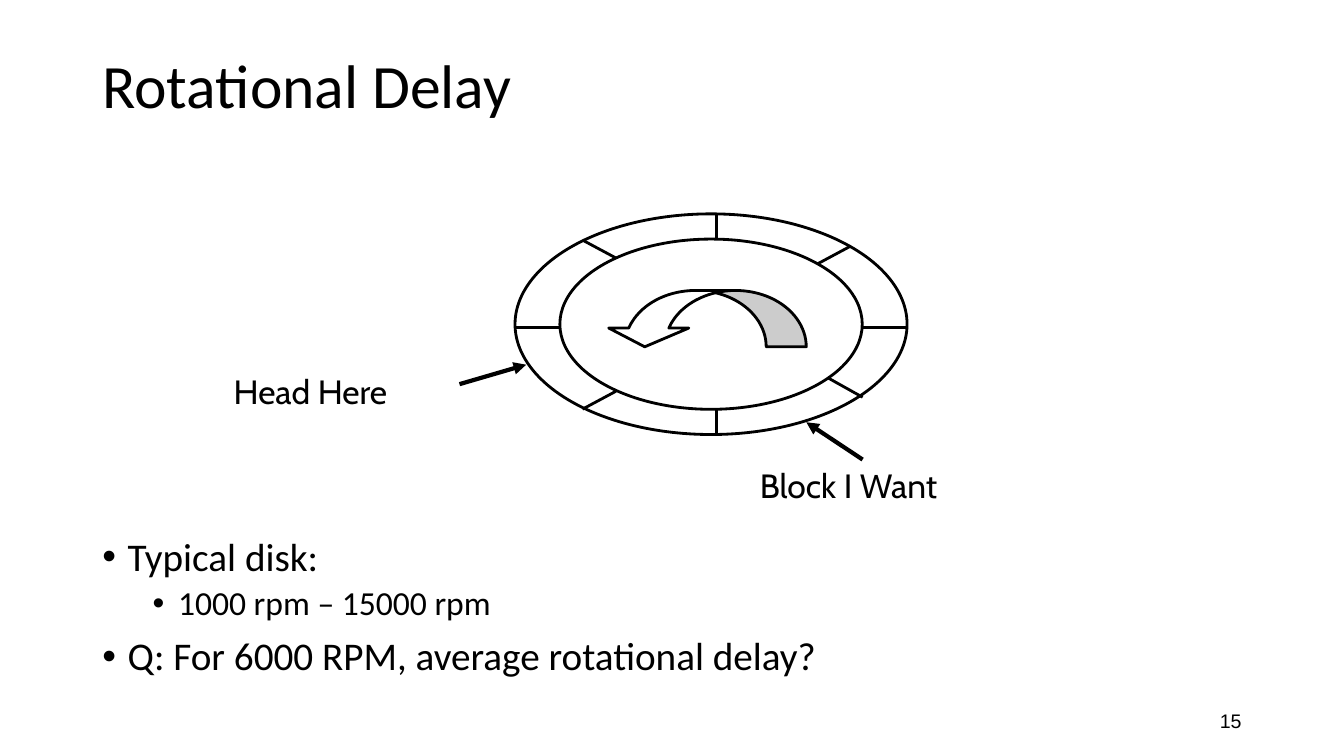
from pptx import Presentation
from pptx.dml.color import RGBColor
from pptx.enum.shapes import MSO_CONNECTOR, MSO_SHAPE
from pptx.enum.text import MSO_ANCHOR, PP_ALIGN
from pptx.oxml.ns import qn
from pptx.util import Cm, Pt
from lxml.etree import SubElement

THEME = dict(
    ink=RGBColor(0, 0, 0), paper=RGBColor(255, 255, 255),
    main="Calibri", label="Cabin", number="Arial",
    title=44, body=28, sub=24, note=24, page=14, line=2, arrow=3,
)

TITLE = "Rotational Delay"
BULLETS = [
    ("Typical disk:", 0),
    ("1000 rpm – 15000 rpm", 1),
    ("Q: For 6000 RPM, average rotational delay?", 0),
]
LEVELS = [
    dict(size=THEME["body"], indent=0.64, before=10),
    dict(size=THEME["sub"], indent=1.91, before=5),
]
LABELS = [("Head Here", 5.64, 9.22, 4.52), ("Block I Want", 18.9, 11.58, 5.31)]
PAGE = "15"

CENTER = (17.92, 8.17)
RINGS = [(9.88, 5.56), (7.62, 4.29)]
TICKS = [
    (18.06, 5.38, 18.06, 6.05), (18.06, 10.31, 18.06, 10.95),
    (21.74, 8.26, 22.86, 8.26), (12.98, 8.26, 14.12, 8.26),
    (20.6, 6.65, 21.44, 6.2), (14.68, 10.31, 15.52, 9.86),
    (20.88, 9.53, 21.74, 10.01), (14.68, 6.05, 15.52, 6.5),
]
POINTERS = [(11.58, 9.68, 13.26, 9.19), (21.74, 11.58, 20.32, 10.64)]
SPIN = (15.24, 7.32, 5.08, 1.42)
BENDS = (0.711, 1.422, 0.333)


def text(slide, words, box, size, font=THEME["main"], anchor=MSO_ANCHOR.TOP,
         align=PP_ALIGN.LEFT, wrap=True, spacing=1.0):
    frame = slide.shapes.add_textbox(*map(Cm, box)).text_frame
    frame.word_wrap = wrap
    frame.vertical_anchor = anchor
    rows = [(words, None)] if isinstance(words, str) else words
    for i, (row, level) in enumerate(rows):
        para = frame.paragraphs[0] if i == 0 else frame.add_paragraph()
        para.alignment = align
        para.line_spacing = spacing
        run = para.add_run()
        run.text = row
        run.font.name = font
        run.font.size = Pt(size)
        run.font.color.rgb = THEME["ink"]
        if level is not None:
            style = LEVELS[level]
            run.font.size = Pt(style["size"])
            para.level = level
            para.space_before = Pt(style["before"])
            props = para._p.get_or_add_pPr()
            props.set("marL", str(Cm(style["indent"])))
            props.set("indent", str(-Cm(LEVELS[0]["indent"])))
            SubElement(props, qn("a:buFont"), typeface="Arial")
            SubElement(props, qn("a:buChar"), char="•")


def shape(slide, kind, box):
    item = slide.shapes.add_shape(kind, *map(Cm, box))
    item.shadow.inherit = False
    item.fill.solid()
    item.fill.fore_color.rgb = THEME["paper"]
    item.line.color.rgb = THEME["ink"]
    item.line.width = Pt(THEME["line"])
    return item


def line(slide, ends, width, head=False):
    item = slide.shapes.add_connector(MSO_CONNECTOR.STRAIGHT, *map(Cm, ends))
    item.line.color.rgb = THEME["ink"]
    item.line.width = Pt(width)
    if head:
        SubElement(item.line._get_or_add_ln(), qn("a:tailEnd"), type="triangle")
    SubElement(item._element.spPr, qn("a:effectLst"))


def main():
    deck = Presentation()
    deck.slide_width, deck.slide_height = Cm(33.87), Cm(19.05)
    slide = deck.slides.add_slide(deck.slide_layouts[6])

    text(slide, PAGE, (23.92, 17.65, 7.62, 1.01), THEME["page"],
         font=THEME["number"], anchor=MSO_ANCHOR.MIDDLE, align=PP_ALIGN.RIGHT)
    text(slide, TITLE, (2.33, 0.84, 29.21, 2.77), THEME["title"],
         anchor=MSO_ANCHOR.MIDDLE, spacing=0.9)
    text(slide, BULLETS, (2.33, 13.42, 29.21, 4.2), THEME["body"], spacing=0.9)

    x, y = CENTER
    for w, h in RINGS:
        shape(slide, MSO_SHAPE.OVAL, (x - w / 2, y - h / 2, w, h))
    for ends in TICKS:
        line(slide, ends, THEME["line"])
    spin = shape(slide, MSO_SHAPE.CURVED_DOWN_ARROW, SPIN)
    for i, bend in enumerate(BENDS):
        spin.adjustments[i] = bend
    spin._element.spPr.find(qn("a:xfrm")).set("flipH", "1")
    for ends in POINTERS:
        line(slide, ends, THEME["arrow"], head=True)
    for words, left, top, width in LABELS:
        text(slide, words, (left, top, width, 1.27), THEME["note"],
             font=THEME["label"], wrap=False)

    deck.save("out.pptx")


if __name__ == "__main__":
    main()
